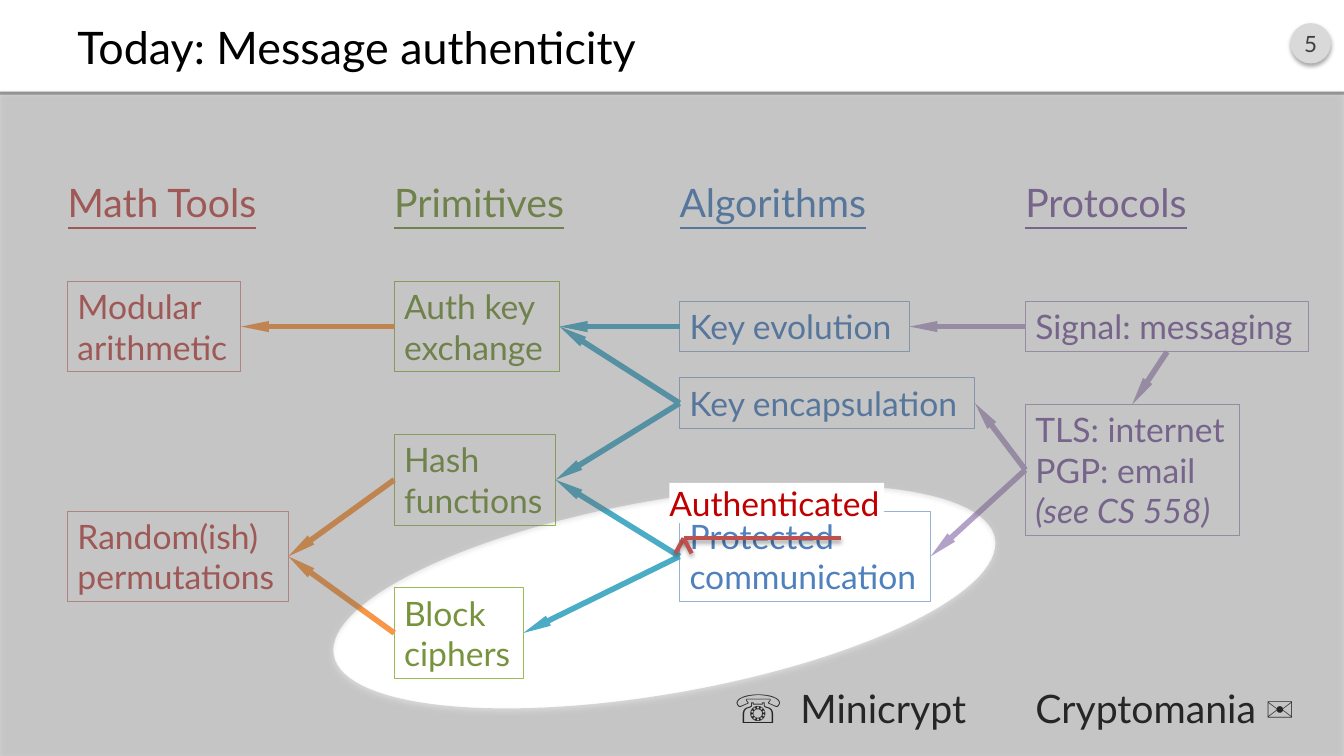
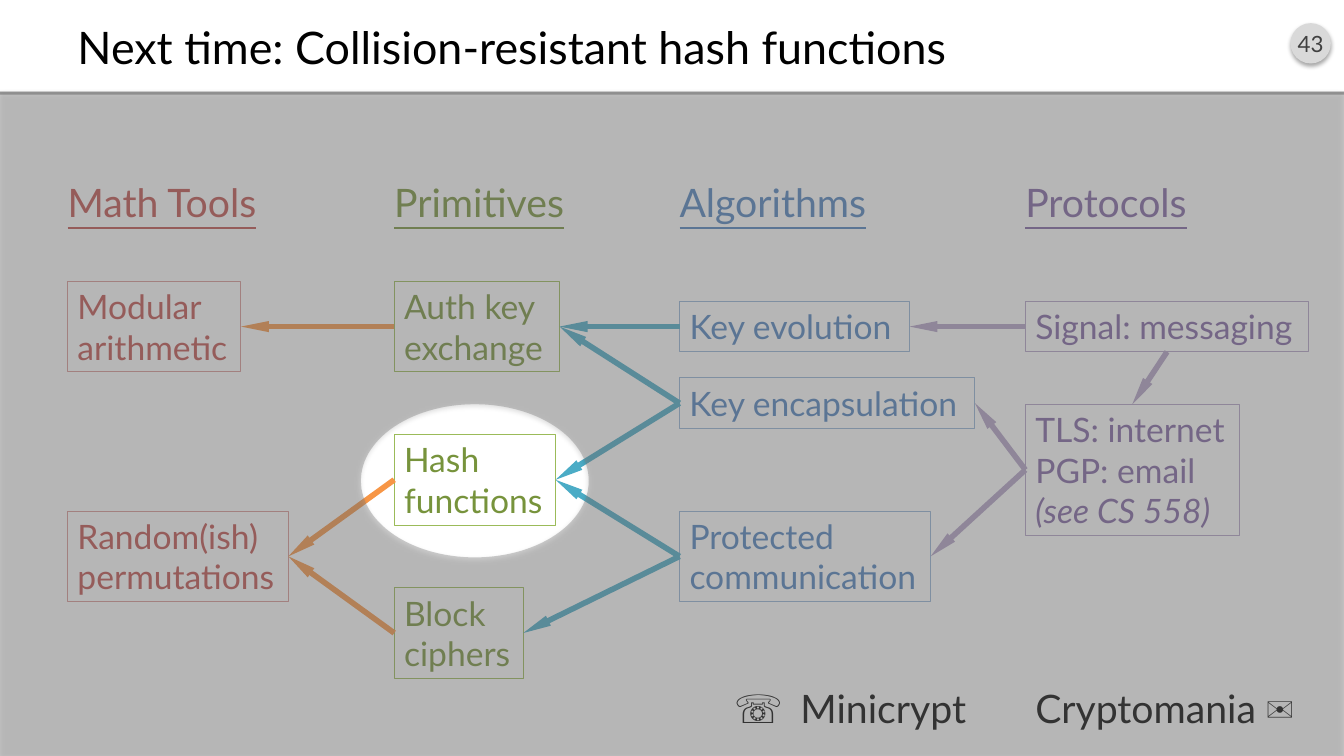
import math
from dataclasses import dataclass

from lxml import etree
from pptx import Presentation
from pptx import util as u
from pptx.dml.color import RGBColor
from pptx.enum import shapes, text
from pptx.oxml.ns import qn

WIDTH, HEIGHT = 13.33, 7.5
FONT = "Lato"
BLACK = RGBColor(0x00, 0x00, 0x00)
WHITE = RGBColor(0xFF, 0xFF, 0xFF)
RULE_GREY = RGBColor(0xA6, 0xA6, 0xA6)
BADGE_GREY = RGBColor(0xD9, 0xD9, 0xD9)
BADGE_TEXT = RGBColor(0x40, 0x40, 0x40)
VEIL_GREY = RGBColor(0x80, 0x80, 0x80)
RED = RGBColor(0xC0, 0x50, 0x4D)
LIGHT_RED = RGBColor(0xD9, 0x96, 0x94)
DARK_RED = RGBColor(0xC0, 0x00, 0x00)
GREEN = RGBColor(0x77, 0x93, 0x3C)
LIGHT_GREEN = RGBColor(0x9B, 0xBB, 0x59)
BLUE = RGBColor(0x4F, 0x81, 0xBD)
LIGHT_BLUE = RGBColor(0x95, 0xB3, 0xD7)
PURPLE = RGBColor(0x80, 0x64, 0xA2)
LIGHT_PURPLE = RGBColor(0xB3, 0xA2, 0xC7)
ORANGE = RGBColor(0xF7, 0x96, 0x46)
TEAL = RGBColor(0x4B, 0xAC, 0xC6)

BAND_HEIGHT = 0.91
HEADING_TOP, FOOTER_TOP, LABEL_HEIGHT = 1.72, 6.74, 0.57
FIRST_ROW, ROW_PITCH = 3.24, 0.76
LINE_HEIGHT, BOX_PADDING = 0.4, 0.1
TOP, LEFT, BOTTOM, RIGHT = range(4)


@dataclass
class Column:
    heading: str
    left: float
    width: float
    ink: RGBColor
    border: RGBColor
    arrow: RGBColor  # arrows that point at this column


COLUMNS = [
    Column("Math Tools", 0.67, 2.12, RED, LIGHT_RED, ORANGE),
    Column("Primitives", 3.91, 1.9, GREEN, LIGHT_GREEN, TEAL),
    Column("Algorithms", 6.74, 2.06, BLUE, LIGHT_BLUE, LIGHT_PURPLE),
    Column("Protocols", 10.17, 1.8, PURPLE, LIGHT_PURPLE, LIGHT_PURPLE),
]

# name: column, row of the box's centre, width, upright lines, italic line
TOPICS = {
    "permutations": (0, 3, 2.19, ["Random(ish)", "permutations"], None),
    "ciphers": (1, 4, 1.28, ["Block", "ciphers"], None),
    "hash": (1, 2, 1.6, ["Hash", "functions"], None),
    "protected": (2, 3, 2.49, ["Protected", "communication"], None),
    "modular": (0, 0, 1.72, ["Modular", "arithmetic"], None),
    "tls": (3, 1.87, 2.12, ["TLS: internet", "PGP: email"], "(see CS 558)"),
    "signal": (3, 0, 2.81, ["Signal: messaging"], None),
    "encapsulation": (2, 1, 2.93, ["Key encapsulation"], None),
    "evolution": (2, 0, 2.28, ["Key evolution"], None),
    "exchange": (1, 0, 1.64, ["Auth key", "exchange"], None),
}

# each topic on the left is needed by those on the right
USES = {
    "permutations": ["hash", "ciphers"],
    "modular": ["exchange"],
    "hash": ["protected", "encapsulation"],
    "ciphers": ["protected"],
    "exchange": ["evolution", "encapsulation"],
    "evolution": ["signal"],
    "encapsulation": ["tls"],
    "protected": ["tls"],
}


def inches(*values):
    return [u.Inches(value) for value in values]


def add_run(paragraph, words, size, color, italic=None, underline=None):
    run = paragraph.add_run()
    run.text = words
    font = run.font
    font.name, font.size, font.color.rgb = FONT, u.Pt(size), color
    font.italic, font.underline = italic, underline


def add_label(slide, box, size, color, lines, insets=(0.1, 0.05), wrap=False,
              align=text.PP_ALIGN.LEFT, underline=None):
    """Place a text box whose lines share one paragraph."""
    shape = slide.shapes.add_textbox(*inches(*box))
    frame = shape.text_frame
    frame.word_wrap = wrap
    frame.auto_size = (text.MSO_AUTO_SIZE.NONE if wrap
                       else text.MSO_AUTO_SIZE.SHAPE_TO_FIT_TEXT)
    frame.margin_left = u.Inches(insets[0])
    frame.margin_top = frame.margin_bottom = u.Inches(insets[1])
    paragraph = frame.paragraphs[0]
    paragraph.alignment = align
    for index, words in enumerate(lines):
        if index:
            paragraph.add_line_break()
        add_run(paragraph, words, size, color, underline=underline)
    return shape


def add_filled(slide, kind, box, color):
    shape = slide.shapes.add_shape(kind, *inches(*box))
    fill_plain(shape, color)
    return shape


def fill_plain(shape, color):
    shape.shadow.inherit = False
    shape.fill.solid()
    shape.fill.fore_color.rgb = color
    shape.line.fill.background()


def set_effects(shape, shadow):
    """Replace the theme's effects by a soft drop shadow, or by none."""
    properties = shape._element.spPr
    effects = properties.find(qn("a:effectLst"))
    if effects is None:
        effects = etree.SubElement(properties, qn("a:effectLst"))
    if shadow:
        outer = etree.SubElement(effects, qn("a:outerShdw"), blurRad="40000",
                                 dist="23000", dir="5400000", rotWithShape="0")
        color = etree.SubElement(outer, qn("a:srgbClr"), val="000000")
        etree.SubElement(color, qn("a:alpha"), val="35000")


def add_line(slide, ends, color, width, shadow=False):
    line = slide.shapes.add_connector(shapes.MSO_CONNECTOR.STRAIGHT,
                                      *inches(*ends))
    line.line.color.rgb = color
    line.line.width = u.Pt(width)
    set_effects(line, shadow)
    return line


def add_arrow(slide, target, target_side, user, user_side, color):
    arrow = add_line(slide, (0, 0, 1, 1), color, 4)
    arrow.begin_connect(target, target_side)
    arrow.end_connect(user, user_side)
    etree.SubElement(arrow.line._get_or_add_ln(), qn("a:headEnd"),
                     type="triangle", w="sm", len="lg")


def add_title_band(slide, title, number):
    badge = add_filled(slide, shapes.MSO_SHAPE.OVAL,
                       (WIDTH - 0.53, 0.23, 0.4, 0.4), BADGE_GREY)
    set_effects(badge, True)
    frame = badge.text_frame
    frame.margin_left = frame.margin_right = 0
    frame.word_wrap = False
    frame.vertical_anchor = text.MSO_ANCHOR.MIDDLE
    frame.paragraphs[0].alignment = text.PP_ALIGN.CENTER
    add_run(frame.paragraphs[0], str(number), 16, BADGE_TEXT)
    add_filled(slide, shapes.MSO_SHAPE.RECTANGLE,
               (0, BAND_HEIGHT, WIDTH, 0.03), RULE_GREY)
    heading = add_label(slide, (COLUMNS[0].left, 0.16, 12, 0.6), 32, BLACK,
                        [title], wrap=True)
    heading.text_frame.vertical_anchor = text.MSO_ANCHOR.MIDDLE


def add_topic(slide, column, row, width, lines, italic_line):
    count = len(lines) + bool(italic_line)
    height = BOX_PADDING + LINE_HEIGHT * count
    top = FIRST_ROW + ROW_PITCH * row - height / 2
    box = add_label(slide, (column.left, top, width, height), 24, column.ink,
                    lines)
    box.line.color.rgb = column.border
    box.line.width = u.Pt(0.75)
    if italic_line:
        add_run(box.text_frame.add_paragraph(), italic_line, 24, column.ink,
                italic=True)
    return box


def add_topic_map(slide):
    for column in COLUMNS:
        add_label(slide, (column.left, HEADING_TOP, column.width, LABEL_HEIGHT),
                  28, column.ink, [column.heading], insets=(0, 0.05),
                  underline=True)
    for left, width, words, align in (
            (7.18, 0.65, "☏", text.PP_ALIGN.LEFT),
            (7.84, 1.84, "Minicrypt", text.PP_ALIGN.RIGHT),
            (COLUMNS[3].left, 2.98, "Cryptomania ✉", text.PP_ALIGN.LEFT)):
        add_label(slide, (left, FOOTER_TOP, width, LABEL_HEIGHT), 28, BLACK,
                  [words], align=align)
    boxes = {name: add_topic(slide, COLUMNS[column], *rest)
             for name, (column, *rest) in TOPICS.items()}
    for target, users in USES.items():
        color = COLUMNS[TOPICS[target][0]].arrow
        for user in users:
            add_arrow(slide, boxes[target], RIGHT, boxes[user], LEFT, color)
    add_arrow(slide, boxes["tls"], TOP, boxes["signal"], BOTTOM,
              COLUMNS[3].arrow)


def ellipse_points(center_x, center_y, radius_x, radius_y, degrees, steps=120):
    turn = math.radians(degrees)
    for step in range(steps):
        angle = -2 * math.pi * step / steps
        x, y = radius_x * math.cos(angle), radius_y * math.sin(angle)
        yield inches(center_x + x * math.cos(turn) - y * math.sin(turn),
                     center_y + x * math.sin(turn) + y * math.cos(turn))


def add_spotlight(slide, ellipse, opacity):
    """Veil everything below the title band except an ellipse."""
    corners = [inches(x, y) for x, y in (
        (0, BAND_HEIGHT), (WIDTH, BAND_HEIGHT), (WIDTH, HEIGHT), (0, HEIGHT))]
    hole = list(ellipse_points(*ellipse))
    builder = slide.shapes.build_freeform(*corners[0])
    builder.add_line_segments(corners[1:], close=True)
    builder.move_to(*hole[0])
    builder.add_line_segments(hole[1:], close=True)
    veil = builder.convert_to_shape()
    fill_plain(veil, VEIL_GREY)
    color = veil._element.spPr.find(qn("a:solidFill"))[0]
    etree.SubElement(color, qn("a:alpha"), val=str(opacity * 1000))
    set_effects(veil, True)


def add_correction(slide, left, top):
    """Strike out a word and write its replacement above it."""
    label = add_label(slide, (left, top, 2.13, 0.4), 24, DARK_RED,
                      ["Authenticated"], insets=(0, 0))
    label.text_frame.margin_right = 0
    label.fill.solid()
    label.fill.fore_color.rgb = WHITE
    tip_x, tip_y = left + 0.14, top + 0.55
    for dx, dy in ((1.56, 0), (-0.08, 0.15), (0.08, 0.15)):
        add_line(slide, (tip_x, tip_y, tip_x + dx, tip_y + dy), RED, 3,
                 shadow=True)


def add_map_slide(presentation, title, number, ellipse, opacity):
    slide = presentation.slides.add_slide(presentation.slide_layouts[6])
    add_title_band(slide, title, number)
    add_topic_map(slide)
    add_spotlight(slide, ellipse, opacity)
    return slide


def main():
    presentation = Presentation()
    presentation.slide_width, presentation.slide_height = inches(WIDTH, HEIGHT)
    today = add_map_slide(presentation, "Today: Message authenticity", 5,
                          (6.59, 5.92, 3.33, 0.96, -10), 30)
    add_correction(today, 6.64, 4.79)
    add_map_slide(presentation, "Next time: Collision-resistant hash functions",
                  43, (4.71, 4.77, 1.13, 0.76, 0), 40)
    presentation.save("out.pptx")


if __name__ == "__main__":
    main()
